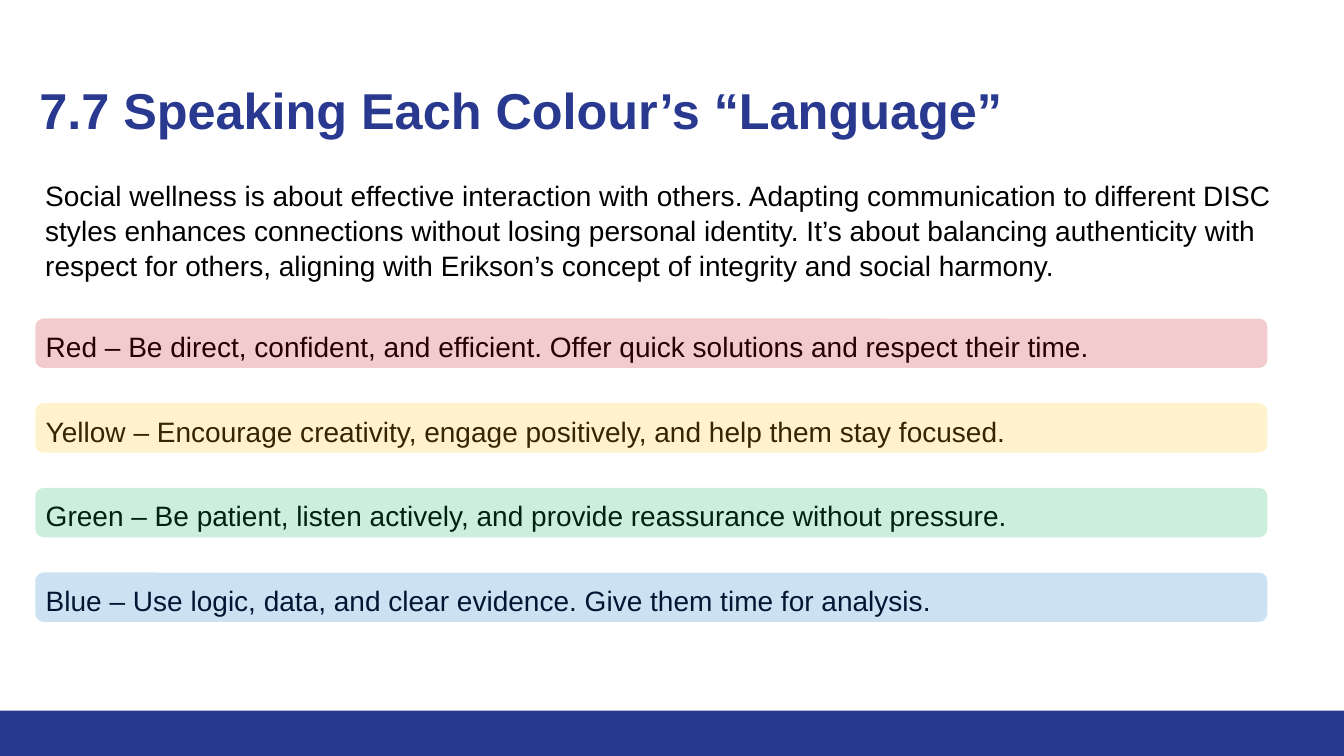
from lxml.etree import SubElement
from pptx import Presentation
from pptx.dml.color import RGBColor
from pptx.enum.shapes import MSO_SHAPE
from pptx.enum.text import MSO_ANCHOR, PP_ALIGN
from pptx.oxml.ns import qn
from pptx.util import Inches, Pt

NAVY = RGBColor(0x2A, 0x39, 0x90)
BLACK = RGBColor(0x00, 0x00, 0x00)
RED = RGBColor(0xC0, 0x00, 0x00)
YELLOW = RGBColor(0xFF, 0xC0, 0x00)
GREEN = RGBColor(0x00, 0xB0, 0x50)
BLUE = RGBColor(0x00, 0x70, 0xC0)
DARK_RED = RGBColor(0x26, 0x00, 0x00)
DARK_YELLOW = RGBColor(0x33, 0x26, 0x00)
DARK_GREEN = RGBColor(0x00, 0x23, 0x10)
DARK_BLUE = RGBColor(0x00, 0x16, 0x33)

TITLE = "7.7 Speaking Each Colour’s “Language”"
INTRO = (
    "Social wellness is about effective interaction with others. "
    "Adapting communication to different DISC styles enhances connections "
    "without losing personal identity. It’s about balancing authenticity with "
    "respect for others, aligning with Erikson’s concept of integrity and "
    "social harmony."
)
STYLES = [
    (RED, DARK_RED, "Red – Be direct, confident, and efficient. "
     "Offer quick solutions and respect their time."),
    (YELLOW, DARK_YELLOW, "Yellow – Encourage creativity, engage positively, "
     "and help them stay focused."),
    (GREEN, DARK_GREEN, "Green – Be patient, listen actively, "
     "and provide reassurance without pressure."),
    (BLUE, DARK_BLUE, "Blue – Use logic, data, and clear evidence. "
     "Give them time for analysis."),
]

TITLE_FONT = {"name": "Arial", "size": Pt(36), "bold": True}
BODY_FONT = {"name": "Arial", "size": Pt(20), "bold": False}
BAR_FRAME = {
    "word_wrap": True, "vertical_anchor": MSO_ANCHOR.MIDDLE,
    "margin_left": Inches(0.08), "margin_right": Inches(0.08),
    "margin_top": Inches(0.06), "margin_bottom": Inches(0),
}


def apply_format(target, values):
    """Set every attribute named in values on target."""
    for attribute, value in values.items():
        setattr(target, attribute, value)


def write_text(frame, wording, font, colour, line_spacing):
    """Put one left-aligned paragraph into a text frame."""
    frame.text = wording
    paragraph = frame.paragraphs[0]
    apply_format(paragraph, {"alignment": PP_ALIGN.LEFT, "line_spacing": line_spacing})
    apply_format(paragraph.runs[0].font, font)
    paragraph.runs[0].font.color.rgb = colour


def add_filled(slide, outline, box, colour):
    """Add a flat shape without line or shadow."""
    shape = slide.shapes.add_shape(outline, *map(Inches, box))
    shape.shadow.inherit = False
    shape.fill.solid()
    shape.fill.fore_color.rgb = colour
    shape.line.fill.background()
    return shape


def add_footer_band(slide, box):
    """Draw the band along the foot of the slide."""
    add_filled(slide, MSO_SHAPE.RECTANGLE, box, NAVY)


def place_title(slide, box):
    """Move and format the title placeholder."""
    title = slide.shapes.title
    apply_format(title, dict(zip(("left", "top", "width", "height"), map(Inches, box))))
    title.text_frame.vertical_anchor = MSO_ANCHOR.MIDDLE
    write_text(title.text_frame, TITLE, TITLE_FONT, NAVY, 0.9)


def add_intro(slide, box):
    """Write the introductory paragraph."""
    intro = slide.shapes.add_textbox(*map(Inches, box))
    intro.text_frame.word_wrap = True
    write_text(intro.text_frame, INTRO, BODY_FONT, BLACK, 1.04)


def add_style_bars(slide, box, bar_height=0.49):
    """Spread one tinted bar per colour style evenly down the box."""
    left, top, width, height = box
    pitch = (height - bar_height) / (len(STYLES) - 1)
    for index, (tint, ink, advice) in enumerate(STYLES):
        bar_box = (left, top + index * pitch, width, bar_height)
        bar = add_filled(slide, MSO_SHAPE.ROUNDED_RECTANGLE, bar_box, tint)
        tint_element = bar._element.spPr.find(qn("a:solidFill"))[0]
        SubElement(tint_element, qn("a:alpha"), val="20000")
        apply_format(bar.text_frame, BAR_FRAME)
        write_text(bar.text_frame, advice, BODY_FONT, ink, 1.0)


def main():
    """Build the slide and save it."""
    deck = Presentation()
    apply_format(deck, {"slide_width": Inches(13.33), "slide_height": Inches(7.5)})
    slide = deck.slides.add_slide(deck.slide_layouts[5])
    add_footer_band(slide, (0, 7.05, 13.33, 0.45))
    place_title(slide, (0.29, 0.4, 12.69, 1.45))
    add_intro(slide, (0.35, 1.71, 12.69, 1.1))
    add_style_bars(slide, (0.35, 3.16, 12.22, 3.01))
    deck.save("out.pptx")


if __name__ == "__main__":
    main()
